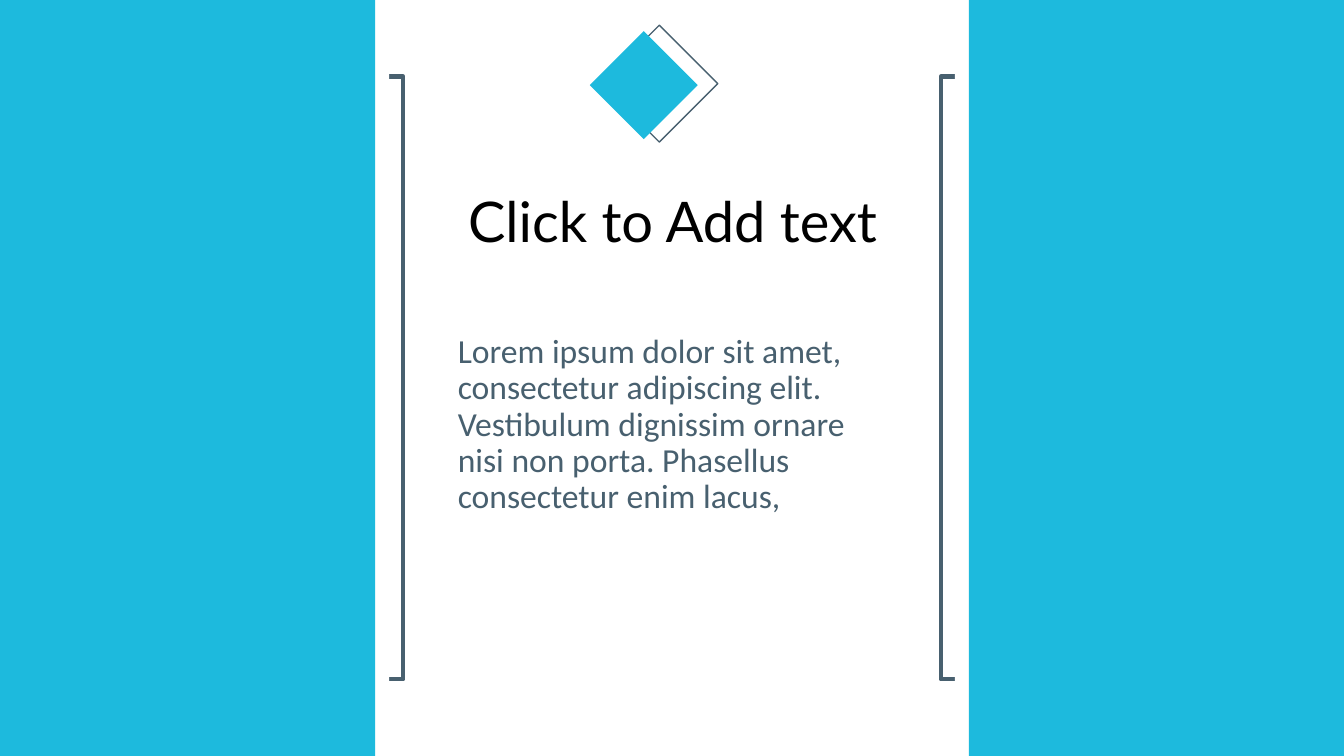
from pptx import Presentation, util as u
from pptx.dml.color import RGBColor
from pptx.enum import shapes, text
from lxml import etree

WIDTH, HEIGHT = 13.33, 7.5
PANEL_WIDTH = 3.72
STEP = 0.14  # offset between the layers of a side panel
CYAN, SLATE, WHITE, BLACK = "1DBADD", "48606F", "FFFFFF", "000000"
RECT = shapes.MSO_SHAPE.RECTANGLE
DIAMOND = shapes.MSO_SHAPE.DIAMOND


def colour(hex_code):
    return RGBColor.from_string(hex_code)


def place(left, top, width, height):
    return [u.Inches(length) for length in (left, top, width, height)]


def add_layer(group, kind, box, fill=None, line=None, weight=1):
    layer = group.shapes.add_shape(kind, *place(*box))
    layer.shadow.inherit = False
    if fill:
        layer.fill.solid()
        layer.fill.fore_color.rgb = colour(fill)
    else:
        layer.fill.background()
    if line:
        layer.line.color.rgb = colour(line)
        layer.line.width = u.Pt(weight)
    else:
        layer.line.fill.background()


def add_side_panel(slide, on_right):
    """Cyan panel; a white layer hides all but the bracket's inner end."""
    def left(offset):
        return WIDTH - PANEL_WIDTH - offset if on_right else offset

    panel = slide.shapes.add_group_shape()
    bracket_top = 0.76
    add_layer(panel, RECT, (left(2 * STEP), bracket_top, PANEL_WIDTH,
                            HEIGHT - 2 * bracket_top), line=SLATE, weight=3)
    for offset, fill in ((STEP, WHITE), (0, CYAN)):
        add_layer(panel, RECT, (left(offset), 0, PANEL_WIDTH, HEIGHT), fill=fill)


def add_diamonds(slide):
    emblem = slide.shapes.add_group_shape()
    add_layer(emblem, DIAMOND, (5.96, 0.25, 1.16, 1.16), line=SLATE)
    add_layer(emblem, DIAMOND, (5.85, 0.31, 1.07, 1.07), fill=CYAN)


def write(holder, words, box, size, font, ink, align, before=0):
    holder.left, holder.top, holder.width, holder.height = place(*box)
    frame = holder.text_frame
    frame.text = words
    frame.word_wrap = True
    frame.auto_size = text.MSO_AUTO_SIZE.NONE
    frame.vertical_anchor = text.MSO_ANCHOR.TOP
    paragraph = frame.paragraphs[0]
    paragraph.alignment = align
    paragraph.line_spacing = 0.9
    paragraph.space_before = u.Pt(before)
    style = paragraph.runs[0].font
    style.size, style.name = u.Pt(size), font
    style.color.rgb = colour(ink)
    return paragraph


def remove_bullet(paragraph):
    properties = paragraph._p.get_or_add_pPr()
    properties.set("marL", "0")
    properties.set("indent", "0")
    namespace = etree.QName(properties).namespace
    etree.SubElement(properties, f"{{{namespace}}}buNone")


def main():
    deck = Presentation()
    deck.slide_width, deck.slide_height = u.Inches(WIDTH), u.Inches(HEIGHT)
    slide = deck.slides.add_slide(deck.slide_layouts[1])

    # Side panels with brackets
    for on_right in (False, True):
        add_side_panel(slide, on_right)

    # Title and body in the centre column
    column_left, column_width = 4.44, 4.46
    write(slide.shapes.title, "Click to Add text",
          (column_left, 1.88, column_width, 0.93),
          size=40, font="Lato", ink=BLACK, align=text.PP_ALIGN.CENTER)
    body = write(slide.placeholders[1],
                 "Lorem ipsum dolor sit amet, consectetur adipiscing elit. "
                 "Vestibulum dignissim ornare nisi non porta. "
                 "Phasellus consectetur enim lacus,",
                 (column_left, 3.27, column_width, 2.7),
                 size=24, font="Calibri", ink=SLATE,
                 align=text.PP_ALIGN.LEFT, before=10)
    remove_bullet(body)

    # Emblem above the title
    add_diamonds(slide)
    deck.save("out.pptx")


if __name__ == "__main__":
    main()
